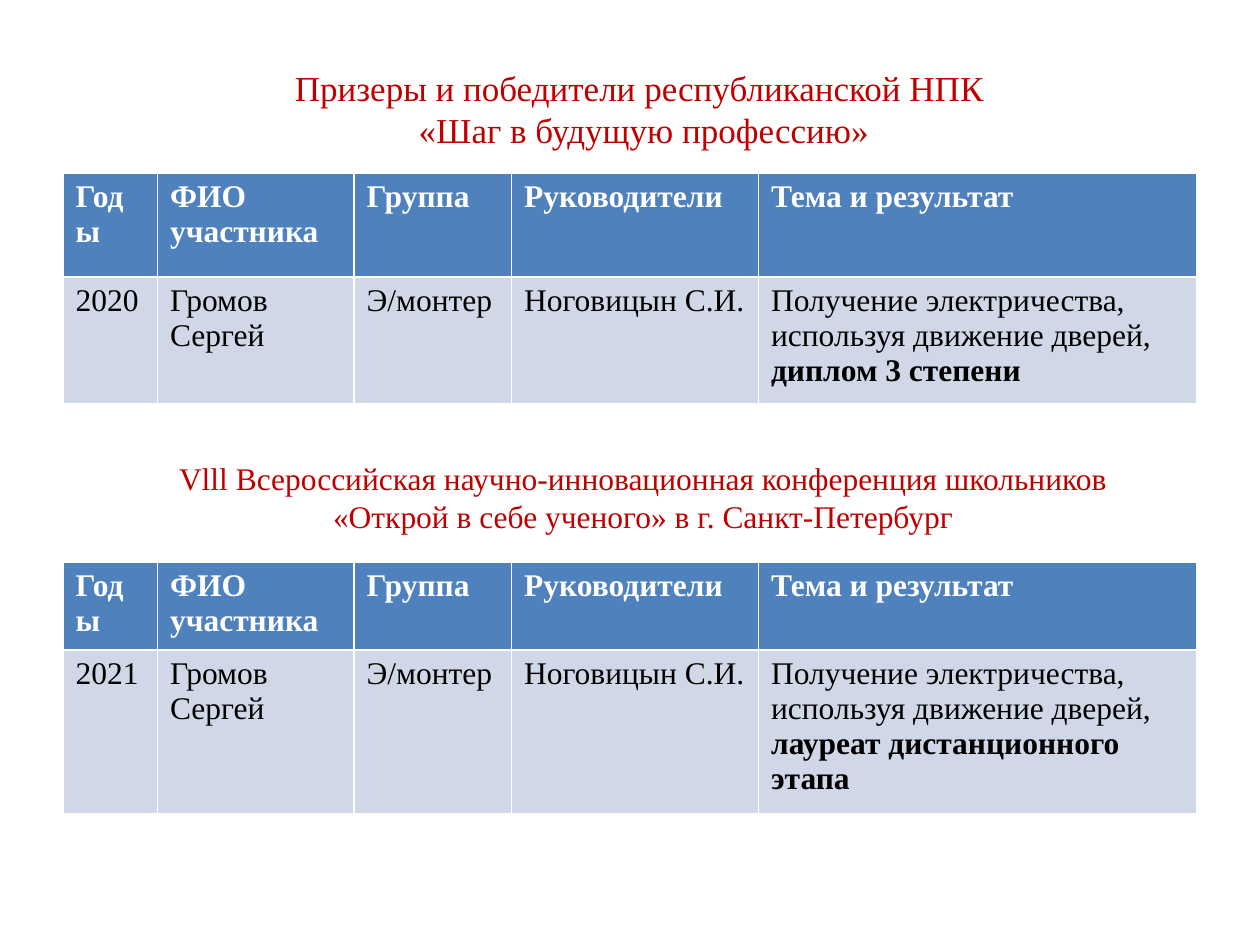
from dataclasses import dataclass

from pptx import Presentation
from pptx import util as u
from pptx.dml.color import RGBColor
from pptx.enum import text

WIDE, HIGH = 10, 7.5
LEFT = 0.05
COLS = (0.075, 0.156, 0.125, 0.196, 0.348)
HEADS = ("Годы", "ФИО участника", "Группа", "Руководители", "Тема и результат")
FONT = "Times New Roman"
RED, WHITE, BLACK, BLUE, PALE = "C00000", "FFFFFF", "000000", "4F81BD", "D0D8E8"


@dataclass
class Title:
    """A centred heading, placed by shares of the slide."""
    words: str
    left: float
    top: float
    width: float
    height: float
    size: int


@dataclass
class Award:
    """A two-row table, placed by shares of the slide."""
    top: float
    rows: tuple[float, float]
    year: str
    topic: str
    prize: str


TITLES = (
    Title("Призеры и победители республиканской НПК \v«Шаг в будущую профессию»",
          0.201, 0.064, 0.62, 0.103, 20),
    Title("Vlll Всероссийская научно-инновационная конференция школьников "
          "«Открой в себе ученого» в г. Санкт-Петербург",
          0.117, 0.479, 0.787, 0.095, 18),
)
AWARDS = (
    Award(0.183, (0.11, 0.134), "2020",
          "Получение электричества, используя движение дверей, ", "диплом 3 степени"),
    Award(0.595, (0.093, 0.173), "2021",
          "Получение электричества, используя движение дверей,",
          " лауреат дистанционного этапа"),
)


def across(share: float) -> int:
    """Turn a share of the slide's width into a length."""
    return u.Inches(share * WIDE)


def down(share: float) -> int:
    """Turn a share of the slide's height into a length."""
    return u.Inches(share * HIGH)


def hue(code: str) -> RGBColor:
    """Turn a hex string into a colour."""
    return RGBColor.from_string(code)


def write(frame, words: str, tail: str = "", size: int = 18, color: str = BLACK,
          bold: bool = False, align=text.PP_ALIGN.LEFT) -> None:
    """Fill a frame with one paragraph, ending in an optional bold tail."""
    para = frame.paragraphs[0]
    para.text, para.alignment = words, align
    if tail:
        para.add_run().text = tail
    for run in para.runs:
        font = run.font
        font.name, font.size = FONT, u.Pt(size)
        font.bold = bold or run.text == tail
        font.color.rgb = hue(color)


def draw_title(slide, item: Title) -> None:
    """Draw one heading."""
    box = slide.shapes.add_textbox(across(item.left), down(item.top),
                                   across(item.width), down(item.height))
    box.text_frame.word_wrap = True
    write(box.text_frame, item.words, size=item.size, color=RED,
          align=text.PP_ALIGN.CENTER)


def draw_award(slide, item: Award) -> None:
    """Draw one table with its header and its entry."""
    grid = slide.shapes.add_table(2, len(COLS), across(LEFT), down(item.top),
                                  across(sum(COLS)), down(sum(item.rows))).table
    for row, share in zip(grid.rows, item.rows):
        row.height = down(share)
    entry = (item.year, "Громов Сергей", "Э/монтер", "Ноговицын С.И.", item.topic)
    for col, share in enumerate(COLS):
        grid.columns[col].width = across(share)
        head, body = grid.cell(0, col), grid.cell(1, col)
        for cell, fill in ((head, BLUE), (body, PALE)):
            cell.fill.solid()
            cell.fill.fore_color.rgb = hue(fill)
        write(head.text_frame, HEADS[col], color=WHITE, bold=True)
        tail = item.prize if col == len(COLS) - 1 else ""
        write(body.text_frame, entry[col], tail)


def main() -> None:
    """Build the slide and save it."""
    deck = Presentation()
    deck.slide_width, deck.slide_height = u.Inches(WIDE), u.Inches(HIGH)
    slide = deck.slides.add_slide(deck.slide_layouts[6])
    for item in AWARDS:
        draw_award(slide, item)
    for item in TITLES:
        draw_title(slide, item)
    deck.save("out.pptx")


if __name__ == "__main__":
    main()
